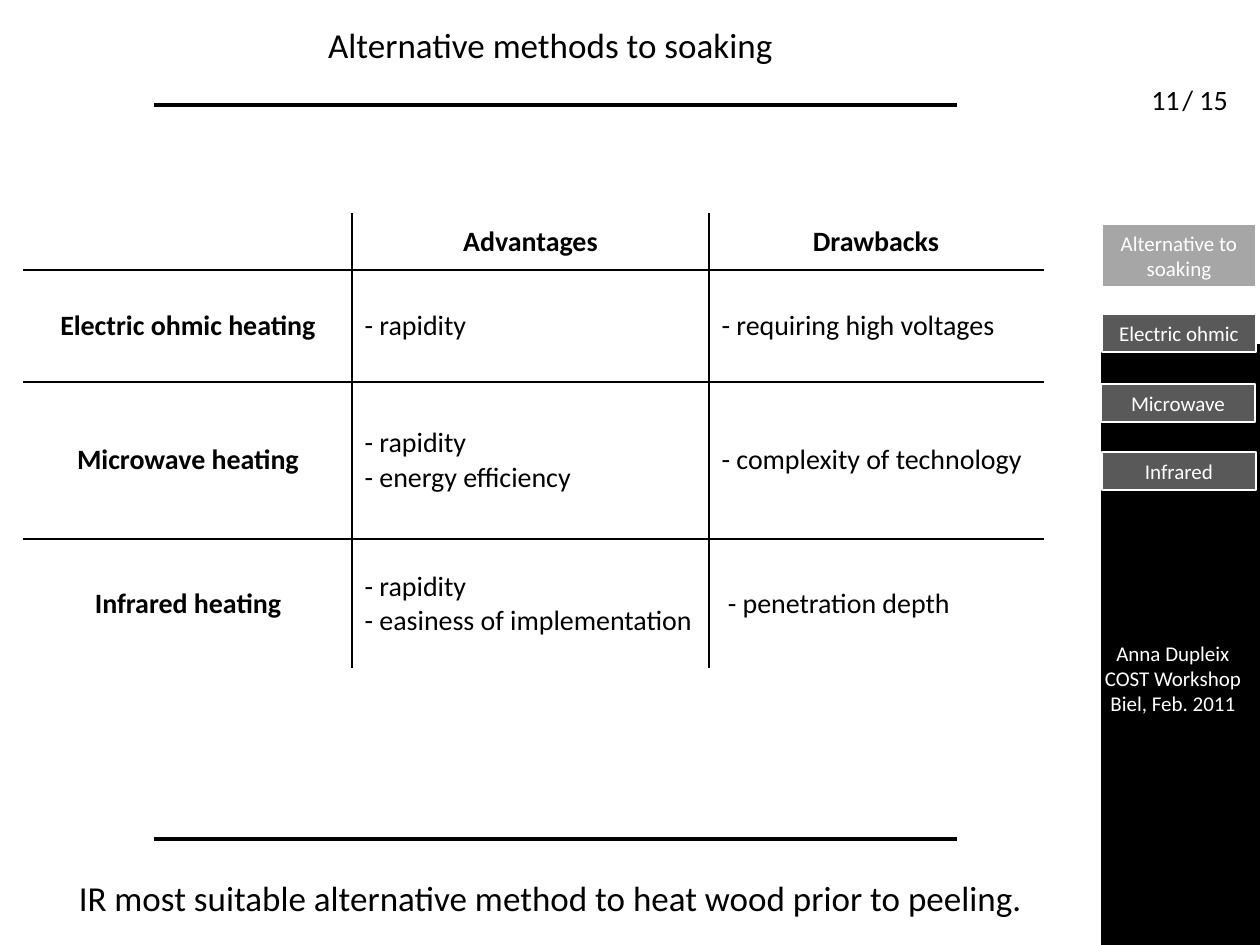
import dataclasses

import pptx
import pptx.dml.color
import pptx.enum.shapes
import pptx.enum.text
import pptx.oxml
import pptx.oxml.ns
import pptx.presentation
import pptx.slide
import pptx.util

PX_PER_INCH = 126
FONT = "Calibri"
BLACK, WHITE, LIGHT_GREY, DARK_GREY = "000000", "FFFFFF", "A6A6A6", "595959"
CENTER = pptx.enum.text.PP_ALIGN.CENTER
LEFT = pptx.enum.text.PP_ALIGN.LEFT
MIDDLE = pptx.enum.text.MSO_ANCHOR.MIDDLE


@dataclasses.dataclass(frozen=True)
class Area:
    left: int
    top: int
    width: int
    height: int


@dataclasses.dataclass(frozen=True)
class Label:
    lines: list[str]
    area: Area
    size: int
    align: pptx.enum.text.PP_ALIGN = CENTER
    color: str = BLACK
    wrap: bool = True


@dataclasses.dataclass(frozen=True)
class Button:
    text: str
    area: Area
    fill: str = DARK_GREY


LABELS = [
    Label(["/ 15"], Area(1170, 76, 75, 47), 16, LEFT),
    Label(["Anna Dupleix\vCOST Workshop", "Biel, Feb. 2011"],
          Area(1091, 634, 164, 92), 12, color=WHITE, wrap=False),
    Label(["Alternative methods to soaking"], Area(15, 17, 1071, 64), 20),
    Label(["IR most suitable alternative method to heat wood prior to peeling."],
          Area(15, 870, 1071, 64), 20),
    Label(["11"], Area(1126, 76, 79, 49), 16),
]
BUTTONS = [
    Button("Alternative to soaking", Area(1102, 224, 154, 63), LIGHT_GREY),
    Button("Electric ohmic", Area(1102, 314, 154, 38)),
    Button("Microwave", Area(1101, 384, 154, 38)),
    Button("Infrared", Area(1102, 452, 154, 38)),
]
RULE_LEFT, RULE_RIGHT = 154, 957
RULE_TOPS = [105, 839]

COLUMN_WIDTHS = [328, 357, 334]
ROW_HEIGHTS = [56, 112, 157, 130]
TABLE_ROWS = [
    ["", "Advantages", "Drawbacks"],
    ["Electric ohmic heating", "- rapidity", "- requiring high voltages"],
    ["Microwave heating", "- rapidity\n- energy efficiency", "- complexity of technology"],
    ["Infrared heating", "- rapidity\n- easiness of implementation", " - penetration depth"],
]


def px(length: int) -> pptx.util.Emu:
    return pptx.util.Emu(round(length * 914400 / PX_PER_INCH))


def place(area: Area) -> list[pptx.util.Emu]:
    return [px(length) for length in dataclasses.astuple(area)]


def rgb(color: str) -> pptx.dml.color.RGBColor:
    return pptx.dml.color.RGBColor.from_string(color)


def write(frame, lines: list[str], size: int, align, color: str, bold: bool = False) -> None:
    frame.text = "\n".join(lines)
    for paragraph in frame.paragraphs:
        paragraph.alignment = align
        paragraph.font.name = FONT
        paragraph.font.size = pptx.util.Pt(size)
        paragraph.font.bold = bold
        paragraph.font.color.rgb = rgb(color)


def add_label(slide: pptx.slide.Slide, label: Label) -> None:
    box = slide.shapes.add_textbox(*place(label.area))
    box.text_frame.word_wrap = label.wrap
    write(box.text_frame, label.lines, label.size, label.align, label.color)


def add_block(slide: pptx.slide.Slide, area: Area, fill: str):
    block = slide.shapes.add_shape(pptx.enum.shapes.MSO_SHAPE.RECTANGLE, *place(area))
    block.shadow.inherit = False
    block.fill.solid()
    block.fill.fore_color.rgb = rgb(fill)
    block.line.fill.background()
    return block


def add_button(slide: pptx.slide.Slide, button: Button) -> None:
    block = add_block(slide, button.area, button.fill)
    block.line.color.rgb = rgb(WHITE)
    block.line.width = pptx.util.Pt(0.75)
    block.text_frame.word_wrap = True
    block.text_frame.vertical_anchor = MIDDLE
    write(block.text_frame, [button.text], 12, CENTER, WHITE)


def add_rule(slide: pptx.slide.Slide, top: int) -> None:
    rule = slide.shapes.add_connector(
        pptx.enum.shapes.MSO_CONNECTOR.STRAIGHT,
        px(RULE_LEFT), px(top), px(RULE_RIGHT), px(top))
    rule.line.color.rgb = rgb(BLACK)
    rule.line.width = pptx.util.Pt(1.75)
    rule._element.spPr.append(pptx.oxml.parse_xml(
        f"<a:effectLst {pptx.oxml.ns.nsdecls('a')}/>"))


def set_borders(cell, outer_sides: dict[str, bool]) -> None:
    properties = cell._tc.get_or_add_tcPr()
    for position, (side, is_outer) in enumerate(outer_sides.items()):
        color = WHITE if is_outer else BLACK
        properties.insert(position, pptx.oxml.parse_xml(
            f"<a:ln{side} {pptx.oxml.ns.nsdecls('a')} w='{pptx.util.Pt(1)}'>"
            f"<a:solidFill><a:srgbClr val='{color}'/></a:solidFill></a:ln{side}>"))


def add_comparison(slide: pptx.slide.Slide) -> None:
    area = Area(24, 214, sum(COLUMN_WIDTHS), sum(ROW_HEIGHTS))
    last_row, last_column = len(ROW_HEIGHTS) - 1, len(COLUMN_WIDTHS) - 1
    table = slide.shapes.add_table(last_row + 1, last_column + 1, *place(area)).table
    table.first_row = table.horz_banding = False
    for column, width in zip(table.columns, COLUMN_WIDTHS):
        column.width = px(width)
    for row, height in zip(table.rows, ROW_HEIGHTS):
        row.height = px(height)
    for i, texts in enumerate(TABLE_ROWS):
        for j, text in enumerate(texts):
            cell = table.cell(i, j)
            heading = i == 0 or j == 0
            cell.vertical_anchor = MIDDLE
            cell.fill.background()
            write(cell.text_frame, text.split("\n"), 16,
                  CENTER if heading else LEFT, BLACK, heading)
            set_borders(cell, {"L": j == 0, "R": j == last_column,
                               "T": i == 0, "B": i == last_row})


def main() -> None:
    deck = pptx.Presentation()
    deck.slide_width, deck.slide_height = px(1260), px(945)
    slide = deck.slides.add_slide(deck.slide_layouts[6])
    add_block(slide, Area(1101, 344, 159, 601), BLACK)
    for top in RULE_TOPS:
        add_rule(slide, top)
    for button in BUTTONS:
        add_button(slide, button)
    for label in LABELS:
        add_label(slide, label)
    add_comparison(slide)
    deck.save("out.pptx")


if __name__ == "__main__":
    main()
